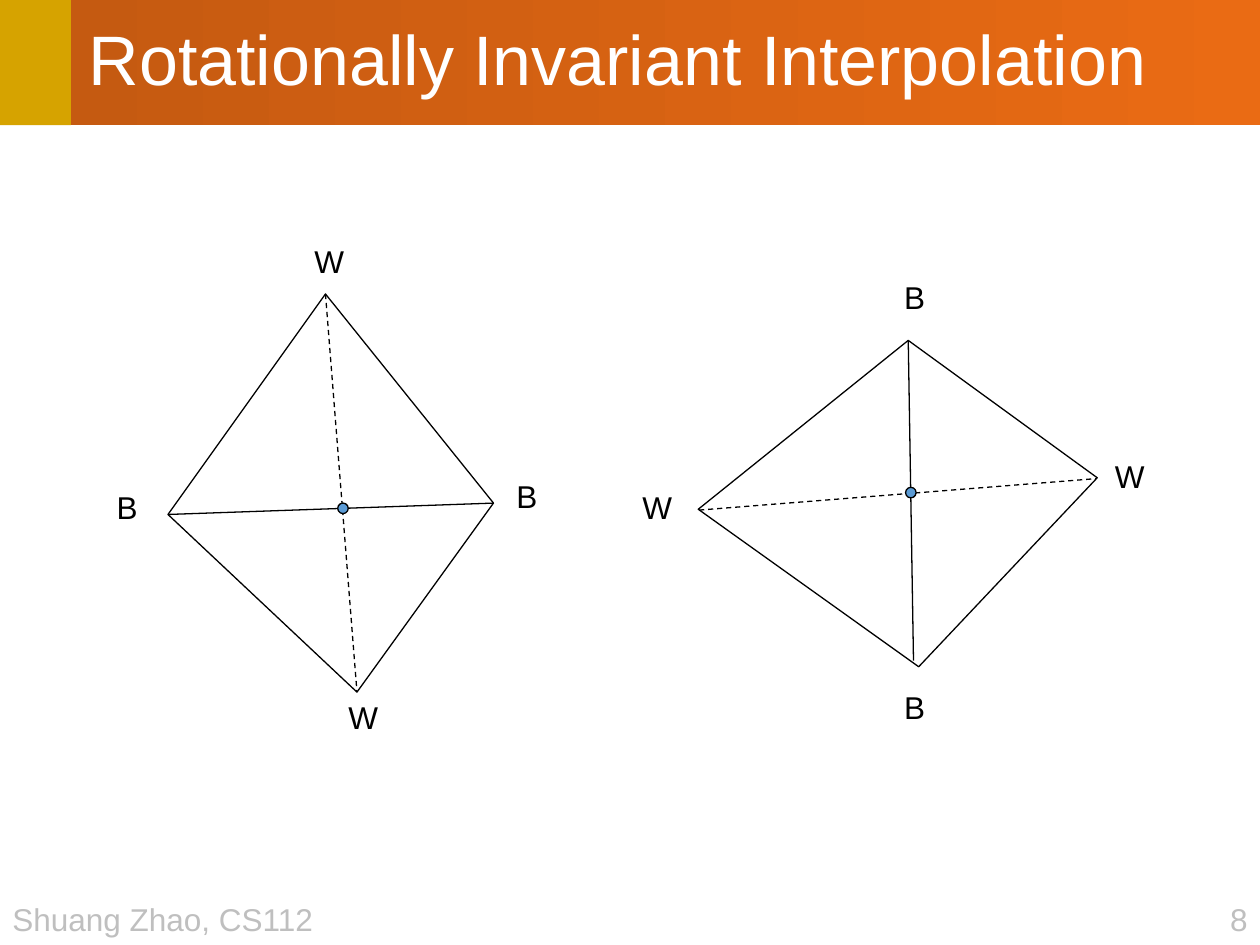
from pptx import Presentation
from pptx.dml.color import RGBColor
from pptx.enum import dml, shapes, text
from pptx.oxml import ns, xmlchemy
from pptx.util import Pt

WHITE = RGBColor(0xFF, 0xFF, 0xFF)
BLACK = RGBColor(0x00, 0x00, 0x00)
GOLD = RGBColor(0xD6, 0xA3, 0x00)
RUST = RGBColor(0xC5, 0x5A, 0x11)
ORANGE = RGBColor(0xEA, 0x6B, 0x14)
GRAY = RGBColor(0xBF, 0xBF, 0xBF)
BLUE = RGBColor(0x5B, 0x9B, 0xD5)


class SlideBuilder:
    font = "Arial"
    text_size = 18
    title_size = 40
    line_width = 0.75
    label_widths = {"W": 32, "B": 27}
    label_height = 29
    dot_size = 6

    def __init__(self, slide):
        self.slide = slide

    def style_text(self, paragraph, size, color):
        font = paragraph.runs[0].font
        font.name = self.font
        font.size = Pt(size)
        font.color.rgb = color

    def style_line(self, line):
        line.color.rgb = BLACK
        line.width = Pt(self.line_width)

    def title(self, words, left, top, width, height):
        title = self.slide.shapes.title
        title.left, title.top = Pt(left), Pt(top)
        title.width, title.height = Pt(width), Pt(height)
        title.fill.gradient()
        title.fill.gradient_angle = 0
        for stop, color, position in zip(title.fill.gradient_stops, (RUST, ORANGE), (0, 1)):
            stop.color.rgb = color
            stop.position = position
        frame = title.text_frame
        frame.text = words
        frame.auto_size = text.MSO_AUTO_SIZE.NONE
        frame.vertical_anchor = text.MSO_ANCHOR.MIDDLE
        paragraph = frame.paragraphs[0]
        paragraph.alignment = text.PP_ALIGN.LEFT
        paragraph.line_spacing = 0.9
        paragraph._p.get_or_add_pPr().set("marL", str(Pt(3)))
        self.style_text(paragraph, self.title_size, WHITE)

    def band(self, left, top, width, height, color):
        band = self.slide.shapes.add_shape(
            shapes.MSO_SHAPE.RECTANGLE, Pt(left), Pt(top), Pt(width), Pt(height))
        band.shadow.inherit = False
        band.fill.solid()
        band.fill.fore_color.rgb = color
        band.line.fill.background()

    def text_box(self, words, left, top, width, color=BLACK, align=text.PP_ALIGN.LEFT):
        box = self.slide.shapes.add_textbox(
            Pt(left), Pt(top), Pt(width), Pt(self.label_height))
        frame = box.text_frame
        frame.text = words
        frame.word_wrap = False
        frame.auto_size = text.MSO_AUTO_SIZE.SHAPE_TO_FIT_TEXT
        paragraph = frame.paragraphs[0]
        paragraph.alignment = align
        self.style_text(paragraph, self.text_size, color)

    def label(self, letter, x, y):
        width = self.label_widths[letter]
        self.text_box(letter, x - width / 2, y - self.label_height / 2, width)

    def outline(self, corners):
        points = [(Pt(x), Pt(y)) for x, y in corners]
        builder = self.slide.shapes.build_freeform(*points[0])
        builder.add_line_segments(points[1:], close=True)
        outline = builder.convert_to_shape()
        outline.shadow.inherit = False
        outline.fill.background()
        self.style_line(outline.line)

    def diagonal(self, start, end, dashed=False):
        diagonal = self.slide.shapes.add_connector(
            shapes.MSO_CONNECTOR.STRAIGHT, *(Pt(v) for v in (*start, *end)))
        self.style_line(diagonal.line)
        if dashed:
            diagonal.line.dash_style = dml.MSO_LINE.DASH
        diagonal._element.spPr.append(xmlchemy.OxmlElement("a:effectLst"))

    def dot(self, x, y):
        size = self.dot_size
        dot = self.slide.shapes.add_shape(
            shapes.MSO_SHAPE.OVAL, Pt(x - size / 2), Pt(y - size / 2), Pt(size), Pt(size))
        dot.shadow.inherit = False
        dot.fill.solid()
        dot.fill.fore_color.rgb = BLUE
        self.style_line(dot.line)

    def quad(self, corners, solid, dashed, center, labels):
        self.diagonal(*dashed, dashed=True)
        self.outline(corners)
        self.diagonal(*solid)
        self.dot(*center)
        for letter, x, y in labels:
            self.label(letter, x, y)


def main():
    deck = Presentation()
    deck.slide_width, deck.slide_height = Pt(720), Pt(540)
    builder = SlideBuilder(deck.slides.add_slide(deck.slide_layouts[5]))
    builder.title("Rotationally Invariant Interpolation", 40.5, 0, 679.5, 71.5)
    builder.band(0, 0, 40.5, 71.5, GOLD)
    builder.text_box("Shuang Zhao, CS112", 0, 511, 188, GRAY)
    builder.text_box("8", 683, 511, 37, GRAY, text.PP_ALIGN.RIGHT)

    top, left, bottom, right = (186, 168), (96, 294), (204, 395.5), (282, 287.5)
    builder.quad(
        (top, left, bottom, right), (left, right), (top, bottom), (196, 290.5),
        (("W", 188.5, 149), ("B", 73, 290), ("B", 301.5, 283.5), ("W", 208, 410)))

    left, bottom, right, top = (399, 291), (525, 381), (627, 273), (519, 194.5)
    builder.quad(
        (left, bottom, right, top), (top, (522, 377.5)), ((399.5, 291.5), (626.5, 273.5)),
        (520.5, 281.5),
        (("B", 523, 170), ("B", 523, 404), ("W", 376, 290), ("W", 646, 272)))

    deck.save("out.pptx")


if __name__ == "__main__":
    main()
